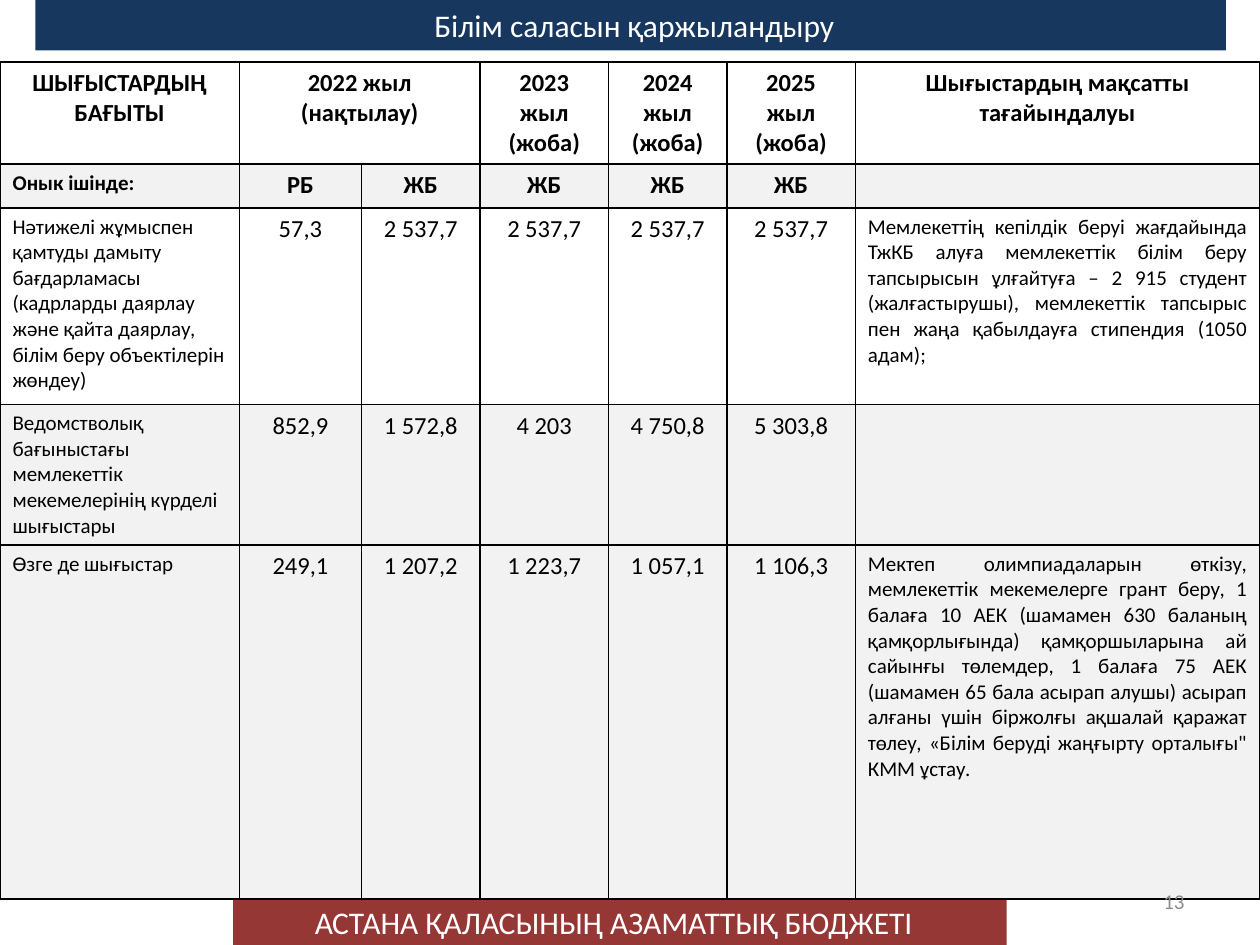
import pptx
import pptx.util
import pptx.dml.color
import pptx.enum.shapes
import pptx.enum.text
import pptx.oxml.ns
import lxml.etree
from pptx.util import Inches

RGBColor = pptx.dml.color.RGBColor
ALIGN = pptx.enum.text.PP_ALIGN
ANCHOR = pptx.enum.text.MSO_ANCHOR

NAVY = RGBColor(0x17, 0x37, 0x5E)
RED = RGBColor(0x95, 0x37, 0x35)
WHITE = RGBColor(0xFF, 0xFF, 0xFF)
BLACK = RGBColor(0, 0, 0)
BAND = RGBColor(0xF2, 0xF2, 0xF2)
GREY = RGBColor(0x8C, 0x8C, 0x8C)


def write(frame, text, size, color, align, bold=False):
    frame.text = text
    for paragraph in frame.paragraphs:
        paragraph.alignment = align
        paragraph.font.name = "Calibri"
        paragraph.font.size = pptx.util.Pt(size)
        paragraph.font.bold = bold
        paragraph.font.color.rgb = color


def add_borders(cell):
    properties = cell._tc.get_or_add_tcPr()
    for position, side in enumerate(("lnL", "lnR", "lnT", "lnB")):
        line = lxml.etree.Element(pptx.oxml.ns.qn(f"a:{side}"), w="12700")
        fill = lxml.etree.SubElement(line, pptx.oxml.ns.qn("a:solidFill"))
        lxml.etree.SubElement(fill, pptx.oxml.ns.qn("a:srgbClr"), val=str(BLACK))
        properties.insert(position, line)


deck = pptx.Presentation()
deck.slide_width, deck.slide_height = Inches(10), Inches(7.5)
slide = deck.slides.add_slide(deck.slide_layouts[6])

# Footer and title bars
bars = [
    (1.85, 7.11, 6.14, RED),
    (0.28, 0, 9.45, NAVY),
]
for left, top, width, color in bars:
    bar = slide.shapes.add_shape(
        pptx.enum.shapes.MSO_SHAPE.RECTANGLE,
        Inches(left), Inches(top), Inches(width), Inches(0.4))
    bar.shadow.inherit = False
    bar.fill.solid()
    bar.fill.fore_color.rgb = color
    bar.line.fill.background()

# Expenditure table
column_widths = [1.9, 0.97, 0.94, 1.02, 0.94, 1.02, 3.21]
row_heights = [0.8, 0.35, 1.56, 1.1, 2.81]
budget_rows = [
    ["ШЫҒЫСТАРДЫҢ БАҒЫТЫ", "2022 жыл\n(нақтылау)", "", "2023 жыл\n(жоба)",
     "2024 жыл\n(жоба)", "2025 жыл\n(жоба)", "Шығыстардың мақсатты тағайындалуы"],
    ["Онык ішінде:", "РБ", "ЖБ", "ЖБ", "ЖБ", "ЖБ", ""],
    ["Нәтижелі жұмыспен қамтуды дамыту бағдарламасы (кадрларды даярлау және "
     "қайта даярлау, білім беру объектілерін жөндеу)",
     "57,3", "2 537,7", "2 537,7", "2 537,7", "2 537,7",
     "Мемлекеттің кепілдік беруі жағдайында ТжКБ алуға мемлекеттік білім беру "
     "тапсырысын ұлғайтуға – 2 915 студент (жалғастырушы), мемлекеттік тапсырыс "
     "пен жаңа қабылдауға стипендия (1050 адам);"],
    ["Ведомстволық бағыныстағы мемлекеттік мекемелерінің күрделі шығыстары",
     "852,9", "1 572,8", "4 203", "4 750,8", "5 303,8", ""],
    ["Өзге де шығыстар", "249,1", "1 207,2", "1 223,7", "1 057,1", "1 106,3",
     "Мектеп олимпиадаларын өткізу, мемлекеттік мекемелерге грант беру, 1 балаға "
     "10 АЕК (шамамен 630 баланың қамқорлығында) қамқоршыларына ай сайынғы "
     "төлемдер, 1 балаға 75 АЕК (шамамен 65 бала асырап алушы) асырап алғаны үшін "
     "біржолғы ақшалай қаражат төлеу, «Білім беруді жаңғырту орталығы\" КММ ұстау."],
]
budget = slide.shapes.add_table(
    len(row_heights), len(column_widths),
    Inches(0), Inches(0.49), Inches(10), Inches(6.62)).table
budget.first_row = False
budget.horz_banding = False
for column, width in zip(budget.columns, column_widths):
    column.width = Inches(width)
for row, height in zip(budget.rows, row_heights):
    row.height = Inches(height)

last = len(column_widths) - 1
for r, texts in enumerate(budget_rows):
    for c, text in enumerate(texts):
        cell = budget.cell(r, c)
        if r == 0 or 0 < c < last:
            size, align = 14, ALIGN.CENTER
        else:
            size, align = 12, ALIGN.LEFT if c == 0 else ALIGN.JUSTIFY
        write(cell.text_frame, text, size, BLACK, align, bold=r < 2)
        if r in (0, 2):
            cell.fill.background()
        else:
            cell.fill.solid()
            cell.fill.fore_color.rgb = BAND
        add_borders(cell)
budget.cell(0, 1).merge(budget.cell(0, 2))

# Bar captions and page number
captions = [
    ("АСТАНА ҚАЛАСЫНЫҢ АЗАМАТТЫҚ БЮДЖЕТІ", 2.4, 7.12, 5.28, 18, WHITE, ALIGN.JUSTIFY, ANCHOR.TOP),
    ("Білім саласын қаржыландыру", 1.02, 0, 8.03, 18, WHITE, ALIGN.CENTER, ANCHOR.TOP),
    ("13", 7.17, 6.95, 2.33, 12, GREY, ALIGN.RIGHT, ANCHOR.MIDDLE),
]
for text, left, top, width, size, color, align, anchor in captions:
    caption = slide.shapes.add_textbox(
        Inches(left), Inches(top), Inches(width), Inches(0.4)).text_frame
    caption.word_wrap = True
    caption.vertical_anchor = anchor
    write(caption, text, size, color, align)

deck.save("out.pptx")
